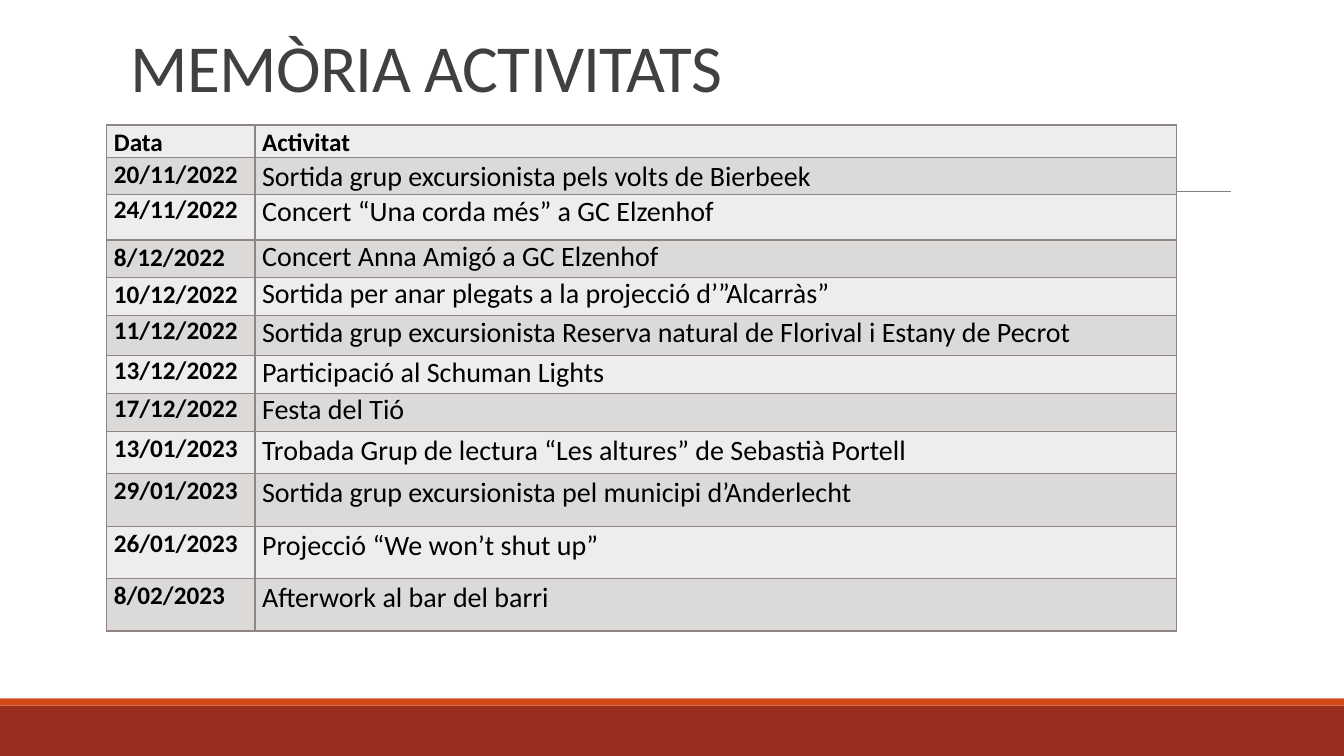
from pptx import Presentation
from pptx.dml.color import RGBColor
from pptx.enum.shapes import MSO_CONNECTOR, MSO_SHAPE
from pptx.enum.text import MSO_ANCHOR
from pptx.oxml import parse_xml
from pptx.oxml.ns import nsdecls
from pptx.util import Inches, Pt

# Content: date, activity, row height, line spacing of each cell
TITLE = "MEMÒRIA ACTIVITATS"
WIDE, SINGLE = 1.07, 1.0
ROWS = [
    ("Data", "Activitat", 0.29, WIDE, WIDE),
    ("20/11/2022", "Sortida grup excursionista pels volts de Bierbeek", 0.37, WIDE, WIDE),
    ("24/11/2022", "Concert “Una corda més” a GC Elzenhof", 0.45, SINGLE, SINGLE),
    ("8/12/2022", "Concert Anna Amigó a GC Elzenhof", 0.37, WIDE, SINGLE),
    ("10/12/2022", "Sortida per anar plegats a la projecció d’”Alcarràs”", 0.38, WIDE, SINGLE),
    ("11/12/2022", "Sortida grup excursionista Reserva natural de Florival i Estany de Pecrot",
     0.4, SINGLE, SINGLE),
    ("13/12/2022", "Participació al Schuman Lights", 0.37, SINGLE, SINGLE),
    ("17/12/2022", "Festa del Tió", 0.38, SINGLE, SINGLE),
    ("13/01/2023", "Trobada Grup de lectura “Les altures” de Sebastià Portell", 0.42, WIDE, WIDE),
    ("29/01/2023", "Sortida grup excursionista pel municipi d’Anderlecht", 0.52, WIDE, WIDE),
    ("26/01/2023", "Projecció “We won’t shut up”", 0.52, WIDE, WIDE),
    ("8/02/2023", "Afterwork al bar del barri", 0.52, WIDE, WIDE),
]
COL_WIDTHS = (1.47, 9.14)
BANDS = [(7, 0.5, "footer"), (6.93, 0.07, "accent")]
THEME = {
    "font": "Calibri", "title_size": 48, "label_size": 18, "text_size": 20,
    "title": "404040", "text": "000000", "footer": "9B2D1F", "accent": "D34817",
    "rule": "808080", "border": "918485", "rows": ("EEEDED", "DCD9D9"),
}


def rgb(value):
    return RGBColor.from_string(value)


def write(tf, text, size, color, bold, spacing):
    p = tf.paragraphs[0]
    p.line_spacing = spacing
    r = p.add_run()
    r.text = text
    for name, value in {"name": THEME["font"], "size": Pt(size), "bold": bold}.items():
        setattr(r.font, name, value)
    r.font.color.rgb = rgb(color)
    return r


def add_borders(cell):
    # Borders come before the fill in the cell properties
    for i, side in enumerate(("lnL", "lnR", "lnT", "lnB")):
        cell._tc.get_or_add_tcPr().insert(i, parse_xml(
            f'<a:{side} {nsdecls("a")} w="{Pt(1)}"><a:solidFill>'
            f'<a:srgbClr val="{THEME["border"]}"/></a:solidFill></a:{side}>'))


prs = Presentation()
prs.slide_width, prs.slide_height = Inches(13.33), Inches(7.5)
s = prs.slides.add_slide(prs.slide_layouts[6])

# Footer bands
for top, height, color in BANDS:
    sp = s.shapes.add_shape(MSO_SHAPE.RECTANGLE, 0, Inches(top), prs.slide_width, Inches(height))
    sp.shadow.inherit = False
    sp.fill.solid()
    sp.fill.fore_color.rgb = rgb(THEME[color])
    sp.line.fill.background()

# Rule behind the table
rule = s.shapes.add_connector(MSO_CONNECTOR.STRAIGHT, Inches(1.31), Inches(1.9),
                              Inches(12.21), Inches(1.9))
rule.line.color.rgb = rgb(THEME["rule"])
rule.line.width = Pt(0.5)
rule._element.spPr.append(parse_xml(f'<a:effectLst {nsdecls("a")}/>'))

# Title
tf = s.shapes.add_textbox(Inches(1.2), Inches(0.26), Inches(11.14), Inches(0.84)).text_frame
tf.word_wrap = True
tf.vertical_anchor = MSO_ANCHOR.BOTTOM
r = write(tf, TITLE, THEME["title_size"], THEME["title"], False, 0.85)
r.font._element.set("spc", "-50")

# Activity table
table = s.shapes.add_table(len(ROWS), len(COL_WIDTHS), Inches(1.06), Inches(1.24),
                           Inches(sum(COL_WIDTHS)), Inches(5.03)).table
for col, width in zip(table.columns, COL_WIDTHS):
    col.width = Inches(width)
margins = {"margin_left": Inches(0.07), "margin_right": Inches(0.07),
           "margin_top": 0, "margin_bottom": 0}
for i, (date, activity, height, *spacings) in enumerate(ROWS):
    table.rows[i].height = Inches(height)
    for j, (text, spacing) in enumerate(zip((date, activity), spacings)):
        cell = table.cell(i, j)
        for name, value in margins.items():
            setattr(cell, name, value)
        cell.fill.solid()
        cell.fill.fore_color.rgb = rgb(THEME["rows"][i % 2])
        add_borders(cell)
        label = i == 0 or j == 0
        size = THEME["label_size" if label else "text_size"]
        write(cell.text_frame, text, size, THEME["text"], label, spacing)

prs.save("out.pptx")
